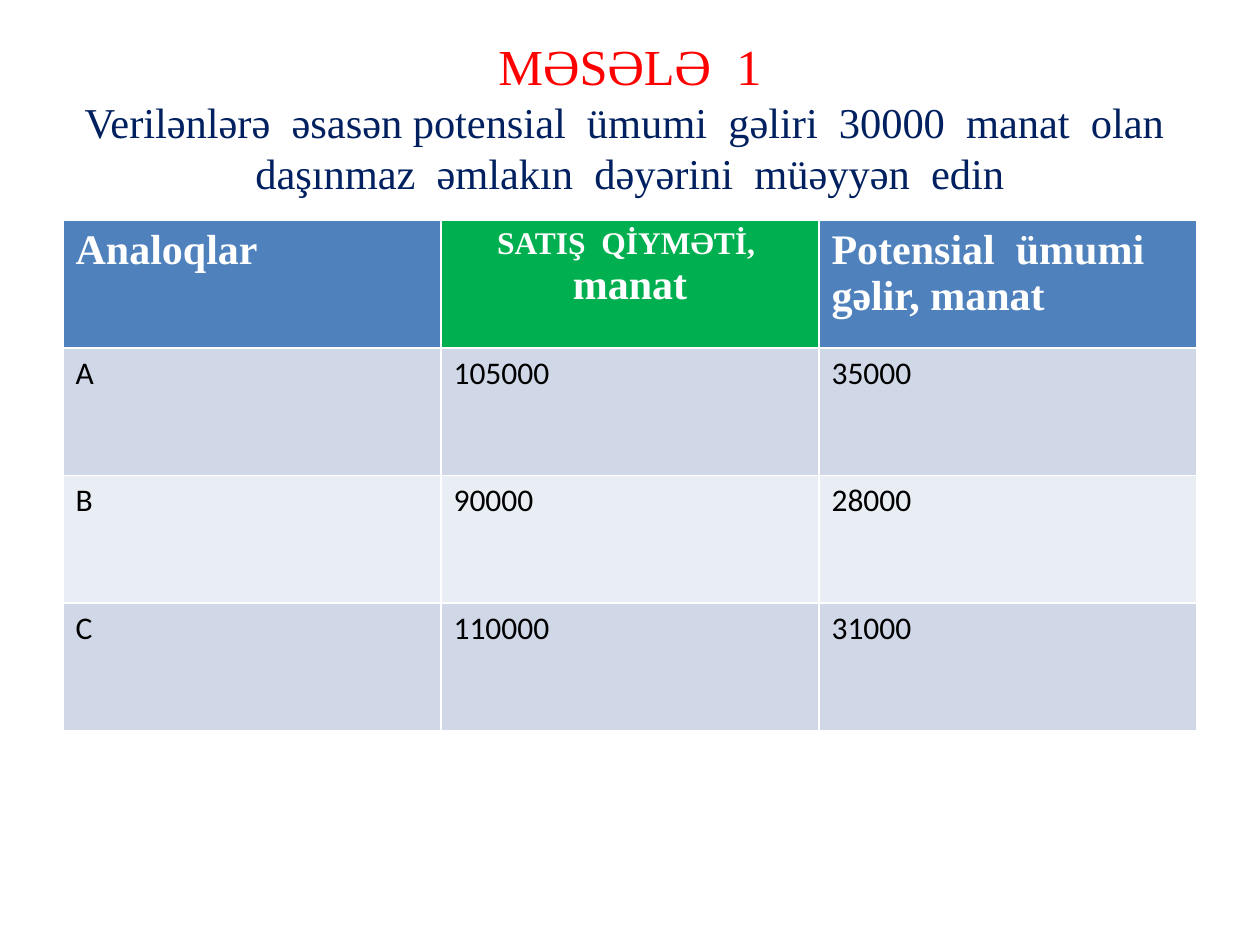
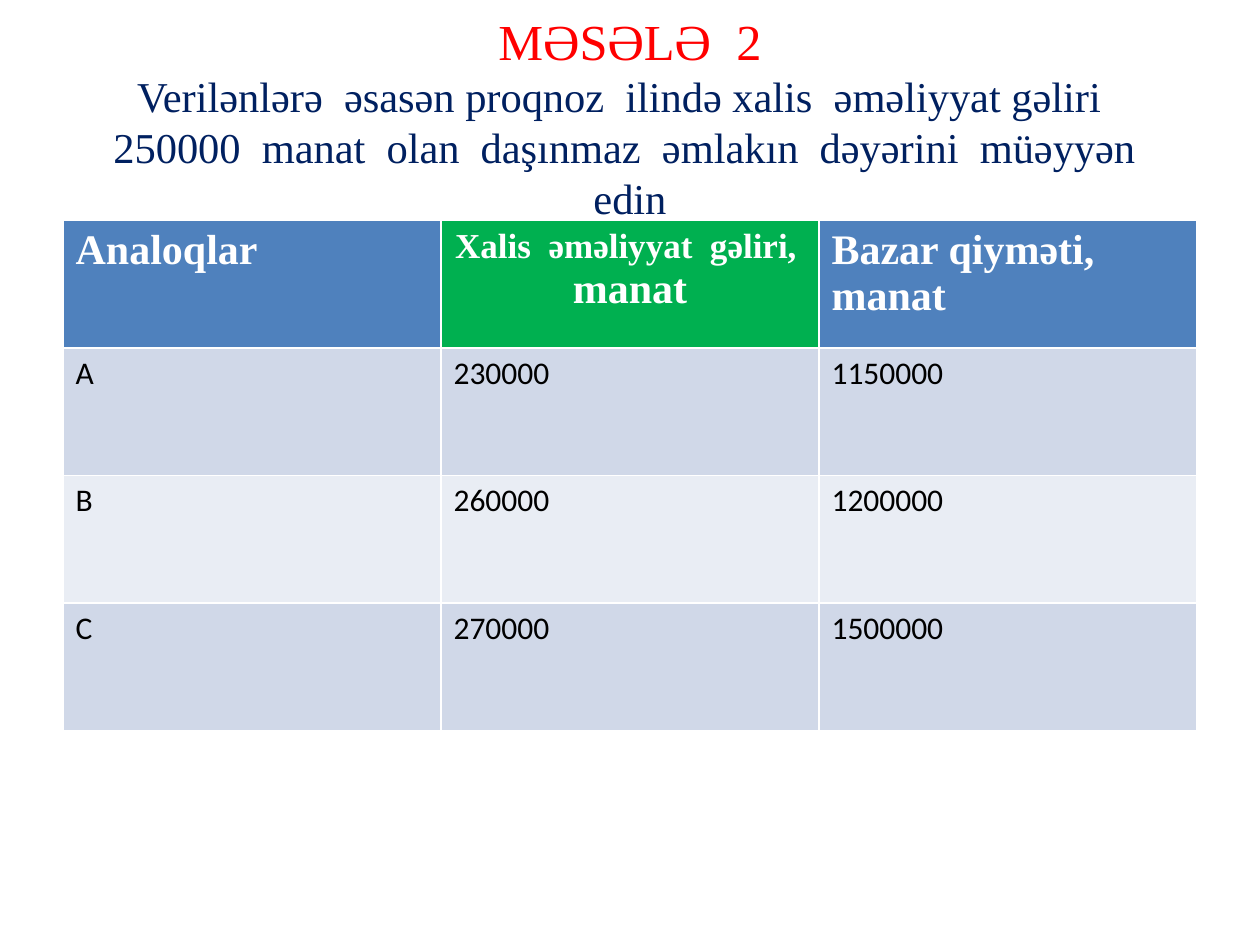
from lxml.etree import SubElement
from pptx import Presentation
from pptx.dml.color import RGBColor
from pptx.enum.text import MSO_ANCHOR, MSO_AUTO_SIZE, PP_ALIGN
from pptx.oxml.ns import qn
from pptx.util import Inches, Pt

RED = RGBColor(0xFF, 0x00, 0x00)
NAVY = RGBColor(0x00, 0x20, 0x60)
BLUE = RGBColor(0x4F, 0x81, 0xBD)
GREEN = RGBColor(0x00, 0xB0, 0x50)
BANDS = RGBColor(0xD0, 0xD8, 0xE8), RGBColor(0xE9, 0xED, 0xF4)
WHITE = RGBColor(0xFF, 0xFF, 0xFF)
BLACK = RGBColor(0x00, 0x00, 0x00)
SERIF, SANS = "Times New Roman", "Calibri"

# Each header is a list of paragraphs, each paragraph a list of (text, size) runs.
PROBLEMS = [
    {
        "heading": "MƏSƏLƏ  1",
        "task": ["Verilənlərə  əsasən potensial  ümumi  gəliri  30000  manat  olan  "
                 "daşınmaz  əmlakın  dəyərini  müəyyən  edin"],
        "headers": [
            [[("Analoqlar", 24)]],
            [[("SATIŞ  QİYMƏTİ, ", 18)], [("manat", 24)]],
            [[("Potensial  ümumi  gəlir, manat", 24)]],
        ],
        "rows": [("A", "105000", "35000"),
                 ("B", "90000", "28000"),
                 ("C", "110000", "31000")],
    },
    {
        "heading": "MƏSƏLƏ  2",
        "task": ["Verilənlərə  əsasən proqnoz  ilində xalis  əməliyyat gəliri  ",
                 "250000  manat  olan  daşınmaz  əmlakın  dəyərini  müəyyən  edin"],
        "headers": [
            [[("Analoqlar", 24)]],
            [[("Xalis  əməliyyat  gəliri,", 20), (" ", 18)], [("manat", 24)]],
            [[("Bazar qiyməti, manat", 24)]],
        ],
        "rows": [("A", "230000", "1150000"),
                 ("B", "260000", "1200000"),
                 ("C", "270000", "1500000")],
    },
]


def add_run(p, text, size, color, font=SERIF, bold=False):
    r = p.add_run()
    r.text = text
    r.font.size, r.font.name, r.font.bold = Pt(size), font, bold
    r.font.color.rgb = color


def fill_cell(cell, color):
    cell.fill.solid()
    cell.fill.fore_color.rgb = color


def set_title(title, heading, task):
    """Write heading and task lines as one paragraph with line breaks."""
    title.left, title.top = Inches(0.5), Inches(0.3)
    title.width, title.height = Inches(9), Inches(1.25)
    tf = title.text_frame
    tf.word_wrap = True
    tf.auto_size = MSO_AUTO_SIZE.NONE
    tf.vertical_anchor = MSO_ANCHOR.MIDDLE
    p = tf.paragraphs[0]
    p.alignment = PP_ALIGN.CENTER
    add_run(p, heading, 28.8, RED)
    for line in task:
        p.add_line_break()
        add_run(p, line, 24.3, NAVY)
    # Keep the breaks from taking the template's larger title size
    for br in p._p.findall(qn("a:br")):
        SubElement(br, qn("a:rPr"), sz="2430")


def add_analogue_table(slide, headers, rows):
    table = slide.shapes.add_table(len(rows) + 1, len(headers), Inches(0.5),
                                   Inches(1.75), Inches(9), Inches(4.05)).table
    for col, paragraphs in enumerate(headers):
        cell = table.cell(0, col)
        fill_cell(cell, GREEN if col == 1 else BLUE)
        tf = cell.text_frame
        for i, runs in enumerate(paragraphs):
            p = tf.add_paragraph() if i else tf.paragraphs[0]
            if col == 1:
                p.alignment = PP_ALIGN.CENTER
            for text, size in runs:
                add_run(p, text, size, WHITE, bold=True)
    for row, values in enumerate(rows, 1):
        for col, value in enumerate(values):
            cell = table.cell(row, col)
            fill_cell(cell, BANDS[(row - 1) % 2])
            add_run(cell.text_frame.paragraphs[0], value, 18, BLACK, SANS)


def main():
    prs = Presentation()
    prs.slide_width, prs.slide_height = Inches(10), Inches(7.5)
    for problem in PROBLEMS:
        slide = prs.slides.add_slide(prs.slide_layouts[5])
        set_title(slide.shapes.title, problem["heading"], problem["task"])
        add_analogue_table(slide, problem["headers"], problem["rows"])
    prs.save("out.pptx")


if __name__ == "__main__":
    main()
